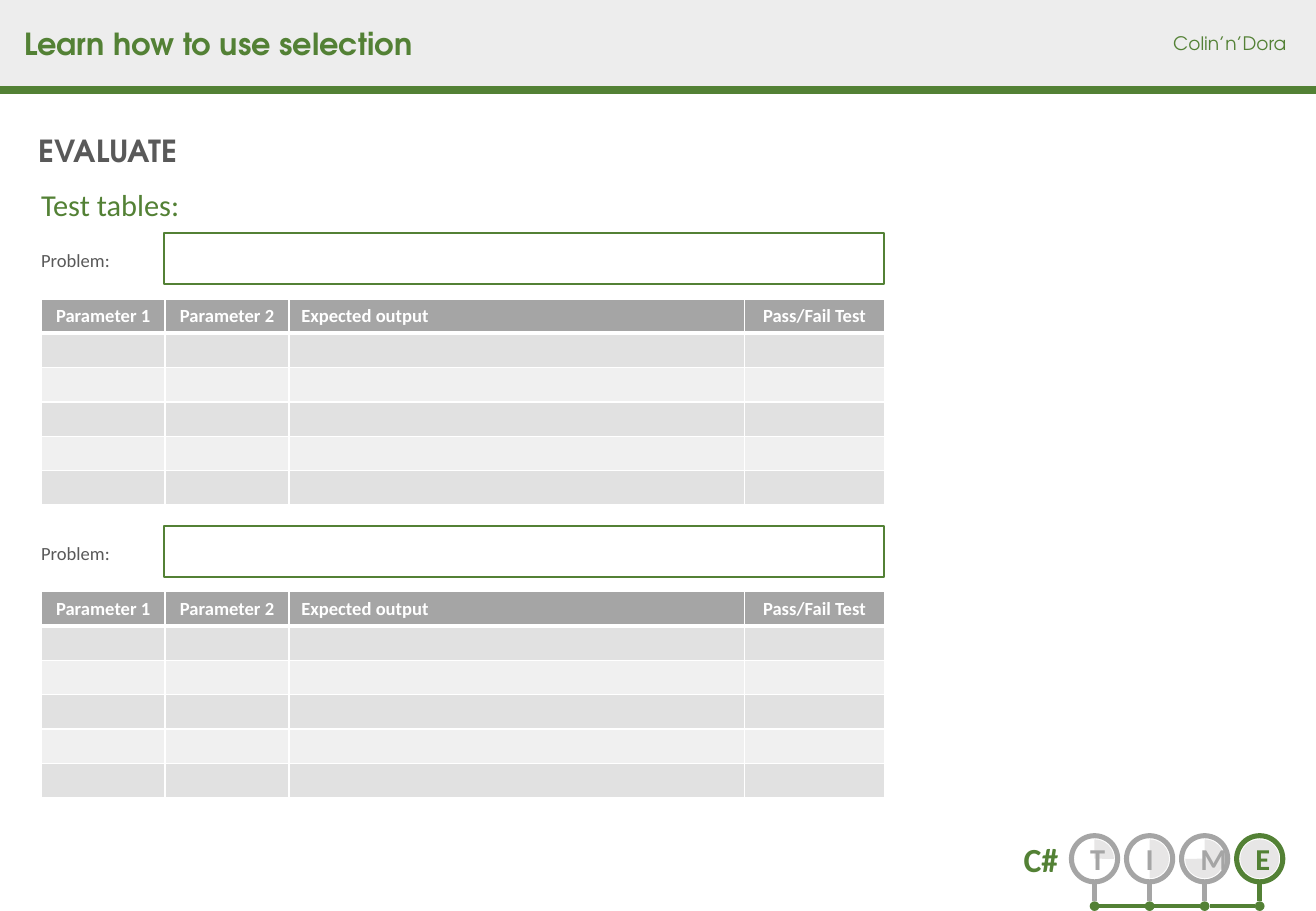
"""Build a worksheet slide with two test tables and a progress tracker."""
from dataclasses import dataclass
from typing import Optional

from lxml.etree import SubElement
from pptx import Presentation
from pptx.dml.color import RGBColor as Rgb
from pptx.enum.shapes import MSO_CONNECTOR as Connector, MSO_SHAPE as Preset
from pptx.enum.text import MSO_ANCHOR as Anchor, PP_ALIGN as Align
from pptx.oxml.ns import qn
from pptx.util import Emu, Inches, Pt

SLIDE_WIDTH, SLIDE_HEIGHT = Inches(10.83), Inches(7.5)
COLUMNS, ROWS = 65, 45


@dataclass(frozen=True)
class Theme:
    green: str = "538135"
    grey: str = "A5A5A5"
    ink: str = "595959"
    white: str = "FFFFFF"
    band: str = "EDEDED"
    disc: str = "E7E6E6"
    odd_row: str = "E1E1E1"
    even_row: str = "F0F0F0"
    heading_font: str = "TeX Gyre Adventor"
    body_font: str = "Calibri"
    heading: float = 18
    body: float = 11
    tracker: float = 20


THEME = Theme()


@dataclass(frozen=True)
class Area:
    left: float
    top: float
    width: float
    height: float

    def emu(self) -> tuple:
        return across(self.left), down(self.top), across(self.width), down(self.height)


@dataclass(frozen=True)
class Style:
    size: float
    color: str
    font: str = THEME.body_font
    bold: bool = False


@dataclass(frozen=True)
class Label:
    text: str
    area: Area
    style: Style
    wrap: bool = False
    align: Align = Align.LEFT
    anchor: Anchor = Anchor.TOP
    spacing: float = 1.0


@dataclass(frozen=True)
class Heading:
    text: str
    width: float
    align: Align = Align.CENTER


@dataclass(frozen=True)
class Badge:
    letter: str
    color: str
    sweep_end: Optional[int] = None


BODY = Style(THEME.body, THEME.ink)
CELL = Style(THEME.body, THEME.white, bold=True)
LABELS = [
    Label("Learn how to use selection", Area(0.6, 0.96, 20.58, 2.4),
          Style(THEME.heading, THEME.green, THEME.heading_font, True)),
    Label("Colin’n’Dora", Area(57.36, 1.26, 7.32, 1.74),
          Style(THEME.body, THEME.green, THEME.heading_font)),
    Label("EVALUATE", Area(1.32, 6.24, 8.34, 2.4),
          Style(THEME.heading, THEME.ink, THEME.heading_font, True)),
    Label("Test tables:", Area(1.44, 9.12, 52.5, 2.52),
          Style(THEME.heading, THEME.green), wrap=True, spacing=0.9),
    Label("C#", Area(45.48, 41.1, 7.38, 2.64),
          Style(THEME.tracker, THEME.green, bold=True),
          wrap=True, align=Align.RIGHT, anchor=Anchor.BOTTOM),
]
HEADINGS = [
    Heading("Parameter 1", 6.12),
    Heading("Parameter 2", 6.12),
    Heading("Expected output", 22.5, Align.LEFT),
    Heading("Pass/Fail Test", 6.9),
]
BADGES = [
    Badge("T", THEME.grey, 0),
    Badge("I", THEME.grey, 90),
    Badge("M", THEME.grey, 180),
    Badge("E", THEME.green),
]
TABLE_ROWS, ROW_HEIGHT = 6, 1.7
BLOCK_TOP, BLOCK_STEP = 11.52, 14.46
BADGE_LEFT, BADGE_TOP, BADGE_STEP, RING = 52.92, 41.28, 2.72, 2.28
DISC, DOT, DOT_TOP = 1.92, 0.48, 44.52


def across(columns: float) -> Emu:
    return Emu(round(SLIDE_WIDTH * columns / COLUMNS))


def down(rows: float) -> Emu:
    return Emu(round(SLIDE_HEIGHT * rows / ROWS))


def write(para, text: str, style: Style, align: Align) -> None:
    para.text = text
    para.alignment = align
    para.font.size = Pt(style.size)
    para.font.name = style.font
    para.font.bold = style.bold
    para.font.color.rgb = Rgb.from_string(style.color)


def draw_label(page, label: Label) -> None:
    frame = page.shapes.add_textbox(*label.area.emu()).text_frame
    frame.word_wrap = label.wrap
    frame.vertical_anchor = label.anchor
    para = frame.paragraphs[0]
    write(para, label.text, label.style, label.align)
    para.line_spacing = label.spacing


def draw_shape(page, preset: Preset, area: Area, fill: Optional[str] = None,
               line: Optional[str] = None, weight: float = 1):
    shape = page.shapes.add_shape(preset, *area.emu())
    shape.shadow.inherit = False
    if fill:
        shape.fill.solid()
        shape.fill.fore_color.rgb = Rgb.from_string(fill)
    else:
        shape.fill.background()
    if line:
        shape.line.color.rgb = Rgb.from_string(line)
        shape.line.width = Pt(weight)
    else:
        shape.line.fill.background()
    return shape


def draw_line(page, x1: float, y1: float, x2: float, y2: float,
              color: str, weight: float) -> None:
    line = page.shapes.add_connector(
        Connector.STRAIGHT, across(x1), down(y1), across(x2), down(y2))
    line.line.color.rgb = Rgb.from_string(color)
    line.line.width = Pt(weight)
    SubElement(line._element.spPr, qn("a:effectLst"))


def draw_border(cell, side: str, weight: float) -> None:
    edge = SubElement(cell._tc.get_or_add_tcPr(), qn(f"a:ln{side}"), w=str(Pt(weight)))
    SubElement(SubElement(edge, qn("a:solidFill")), qn("a:srgbClr"), val=THEME.white)


def draw_cell(cell, row: int, heading: Heading) -> None:
    for side in "LRTB":
        header_edge = (row, side) in ((0, "B"), (1, "T"))
        draw_border(cell, side, 3 if header_edge else 1)
    fill = THEME.grey if row == 0 else THEME.odd_row if row % 2 else THEME.even_row
    cell.fill.solid()
    cell.fill.fore_color.rgb = Rgb.from_string(fill)
    cell.vertical_anchor = Anchor.MIDDLE
    cell.margin_top = cell.margin_bottom = Inches(0.04)
    para = cell.text_frame.paragraphs[0]
    if row == 0:
        write(para, heading.text, CELL, heading.align)
    else:
        SubElement(para._p, qn("a:endParaRPr"), sz=str(int(THEME.body * 100)))


def draw_block(page, top: float) -> None:
    draw_label(page, Label("Problem:", Area(1.44, top + 0.48, 6.66, 1.74), BODY, wrap=True))
    draw_shape(page, Preset.RECTANGLE, Area(8.1, top, 35.58, 2.52), THEME.white, THEME.green)
    width = sum(heading.width for heading in HEADINGS)
    area = Area(2.04, top + 3.24, width, TABLE_ROWS * ROW_HEIGHT)
    table = page.shapes.add_table(TABLE_ROWS, len(HEADINGS), *area.emu()).table
    for column, heading in enumerate(HEADINGS):
        table.columns[column].width = across(heading.width)
        for row in range(TABLE_ROWS):
            draw_cell(table.cell(row, column), row, heading)


def draw_badge(page, index: int, badge: Badge) -> None:
    left = BADGE_LEFT + index * BADGE_STEP
    center = left + RING / 2
    is_pie = badge.sweep_end is not None
    disc = draw_shape(page, Preset.PIE if is_pie else Preset.OVAL,
                      Area(left + 0.18, BADGE_TOP + 0.18, DISC, DISC), THEME.disc)
    if is_pie:
        disc.adjustments[0] = 270 * 0.6
        disc.adjustments[1] = badge.sweep_end * 0.6
    ring = draw_shape(page, Preset.OVAL, Area(left, BADGE_TOP, RING, RING),
                      line=badge.color, weight=3)
    write(ring.text_frame.paragraphs[0], badge.letter,
          Style(THEME.heading, badge.color, bold=True), Align.CENTER)
    draw_line(page, center, BADGE_TOP + RING, center, DOT_TOP, badge.color, 3)
    draw_shape(page, Preset.OVAL, Area(center - DOT / 2, DOT_TOP, DOT, DOT), THEME.green)
    if index:
        middle = DOT_TOP + DOT / 2
        draw_line(page, center - BADGE_STEP + DOT / 2, middle,
                  center - DOT / 2, middle, THEME.green, 2.25)


def main() -> None:
    deck = Presentation()
    deck.slide_width, deck.slide_height = SLIDE_WIDTH, SLIDE_HEIGHT
    page = deck.slides.add_slide(deck.slide_layouts[6])
    draw_shape(page, Preset.RECTANGLE, Area(0, 0, COLUMNS, 4.44), THEME.band)
    draw_line(page, 0, 4.44, COLUMNS, 4.44, THEME.green, 4.5)
    for label in LABELS:
        draw_label(page, label)
    for index, badge in enumerate(BADGES):
        draw_badge(page, index, badge)
    for block in range(2):
        draw_block(page, BLOCK_TOP + block * BLOCK_STEP)
    deck.save("out.pptx")


if __name__ == "__main__":
    main()
